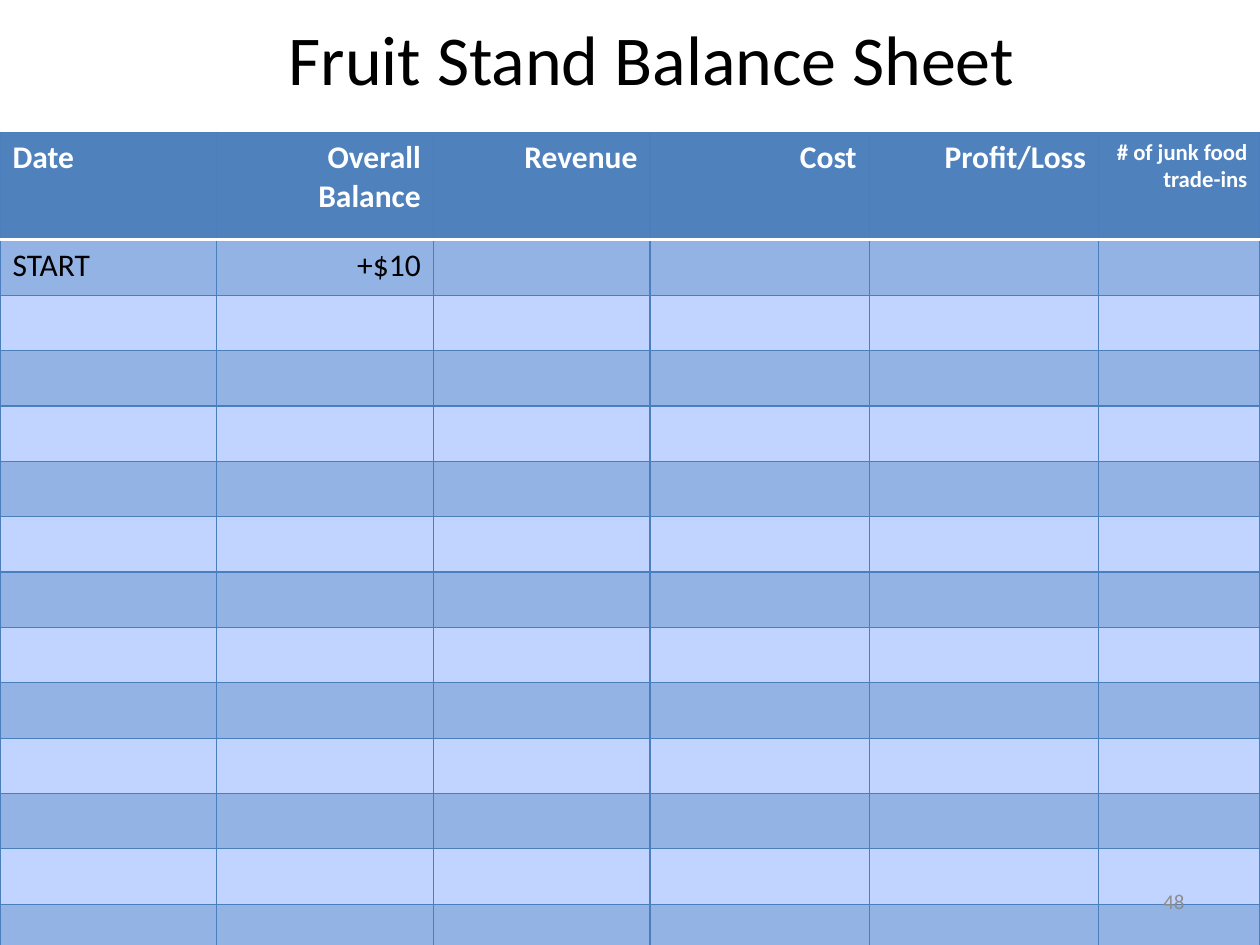
from lxml.etree import SubElement
from pptx import Presentation
from pptx.dml.color import RGBColor
from pptx.enum.text import MSO_ANCHOR as Anchor, MSO_AUTO_SIZE as AutoSize, PP_ALIGN as Align
from pptx.oxml.ns import qn
from pptx.util import Inches, Pt

WIDTH, HEIGHT = Inches(10), Inches(7.5)
FONT = "Calibri"
COLORS = {
    "header": "4F81BD",
    "band": "93B3E5",
    "plain": "C0D4FF",
    "grid": "4B7EBC",
    "white": "FFFFFF",
    "black": "000000",
    "gray": "8C8C8C",
}
HEADINGS = ["Date", "Overall Balance", "Revenue", "Cost", "Profit/Loss", "# of junk food trade-ins"]
START_ROW = ["START", "+$10"]
COLUMN_SHARES = [0.172, 0.172, 0.172, 0.174, 0.182, 0.128]
ENTRY_ROWS = 13
HEADER_SHARE = 0.13


def color(key):
    return RGBColor.from_string(COLORS[key])


def box(left, top, width, height):
    return int(WIDTH * left), int(HEIGHT * top), int(WIDTH * width), int(HEIGHT * height)


def write(frame, words, size, ink, align, bold=False):
    frame.text = words
    paragraph = frame.paragraphs[0]
    paragraph.alignment = align
    for run in paragraph.runs:
        run.font.name = FONT
        run.font.size = Pt(size)
        run.font.bold = bold
        run.font.color.rgb = color(ink)


def rule_cell(cell, top, bottom):
    grid = ("grid", 0.75)
    properties = cell._tc.get_or_add_tcPr()
    for side, (ink, points) in zip("LRTB", (grid, grid, top, bottom)):
        border = SubElement(properties, qn(f"a:ln{side}"), w=str(Pt(points)))
        fill = SubElement(border, qn("a:solidFill"))
        SubElement(fill, qn("a:srgbClr"), val=COLORS[ink])


def add_title(slide, area):
    title = slide.shapes.title
    title.left, title.top, title.width, title.height = area
    frame = title.text_frame
    frame.word_wrap = True
    frame.auto_size = AutoSize.NONE
    frame.vertical_anchor = Anchor.TOP
    write(frame, "Fruit Stand Balance Sheet", 40, "black", Align.CENTER)


def add_balance_sheet(slide, area):
    left, top, width, height = area
    sheet = slide.shapes.add_table(ENTRY_ROWS + 1, len(HEADINGS), *area).table
    for column, share in zip(sheet.columns, COLUMN_SHARES):
        column.width = int(width * share)
    header_height = int(height * HEADER_SHARE)
    entry_height = (height - header_height) // ENTRY_ROWS
    contents = {0: HEADINGS, 1: START_ROW}
    for r, row in enumerate(sheet.rows):
        row.height = entry_height if r else header_height
        words = contents.get(r, [])
        shade = ("band" if r % 2 else "plain") if r else "header"
        above = ("white", 2) if r == 1 else ("grid", 0.75)
        below = ("white", 2) if r == 0 else ("grid", 0.75)
        for c, cell in enumerate(row.cells):
            rule_cell(cell, above, below)
            cell.fill.solid()
            cell.fill.fore_color.rgb = color(shade)
            if c < len(words):
                size = 13 if words[c] == HEADINGS[-1] else 18
                ink = "black" if r else "white"
                align = Align.RIGHT if c else Align.LEFT
                write(cell.text_frame, words[c], size, ink, align, bold=r == 0)


def add_page_number(slide, area):
    frame = slide.shapes.add_textbox(*area).text_frame
    frame.word_wrap = True
    frame.vertical_anchor = Anchor.MIDDLE
    write(frame, "48", 12, "gray", Align.RIGHT)


def main():
    deck = Presentation()
    deck.slide_width, deck.slide_height = WIDTH, HEIGHT
    slide = deck.slides.add_slide(deck.slide_layouts.get_by_name("Title Only"))
    add_title(slide, box(0.194, 0.01, 0.646, 0.1))
    add_balance_sheet(slide, box(0, 0.14, 1, 0.876))
    add_page_number(slide, box(0.717, 0.927, 0.233, 0.053))
    deck.save("out.pptx")


if __name__ == "__main__":
    main()
